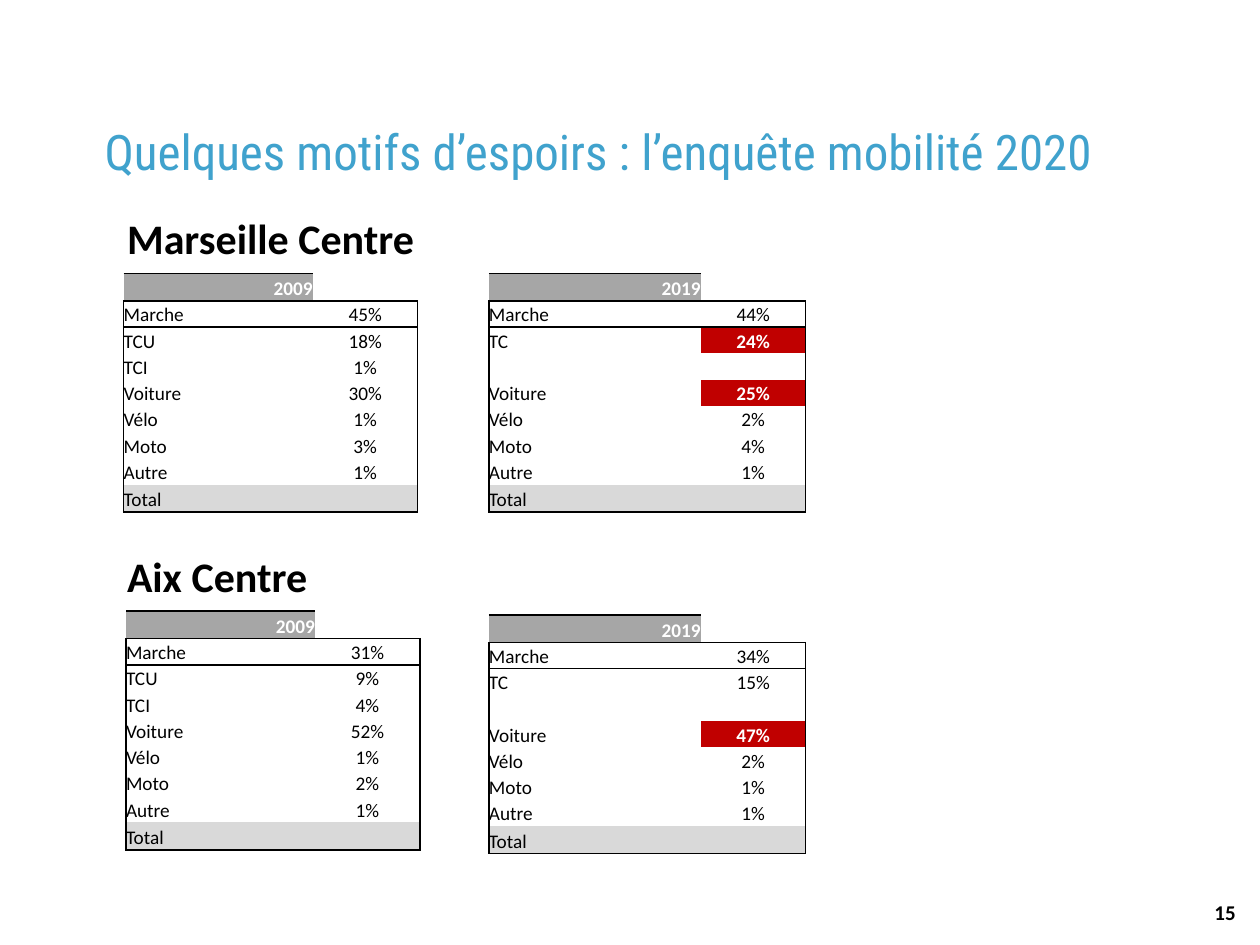
from lxml import etree
from pptx import Presentation
from pptx.dml.color import RGBColor
from pptx.enum.text import MSO_ANCHOR, MSO_AUTO_SIZE, PP_ALIGN
from pptx.oxml.ns import qn
from pptx.util import Pt

LEFT, MID, RIGHT = PP_ALIGN.LEFT, PP_ALIGN.CENTER, PP_ALIGN.RIGHT
LOW = MSO_ANCHOR.BOTTOM
GROW = MSO_AUTO_SIZE.SHAPE_TO_FIT_TEXT
PLAIN = "{2D5ABB26-0587-4C30-8999-92F81FD0307C}"
BLACK, WHITE, RED = "000000", "FFFFFF", "C00000"
GREY, PALE, BLUE = "A6A6A6", "D9D9D9", "40A2CD"
OLD = ["Marche", "TCU", "TCI", "Voiture", "Vélo", "Moto", "Autre"]
NEW = ["Marche", "TC", "", "Voiture", "Vélo", "Moto", "Autre"]


def color(code):
    """Turn a hex string into a colour."""
    return RGBColor.from_string(code)


def style(para, size, code, bold=False, face="Calibri"):
    """Format all runs of a paragraph."""
    for run in para.runs:
        font = run.font
        font.name, font.size, font.bold = face, Pt(size), bold
        font.color.rgb = color(code)


def label(slide, box, text, size, code, bold=False, face="Calibri"):
    """Add a text box and return its frame."""
    frame = slide.shapes.add_textbox(*map(Pt, box)).text_frame
    frame.word_wrap = True
    frame.auto_size = GROW
    frame.text = text
    style(frame.paragraphs[0], size, code, bold, face)
    return frame


def title(slide, box, text):
    """Add the slide title."""
    frame = label(slide, box, text, 28, BLUE, face="Roboto Condensed")
    frame.margin_left = 0


def heading(slide, box, text):
    """Add the heading of a city."""
    para = label(slide, box, text, 24, BLACK, True).paragraphs[0]
    para.line_spacing = Pt(30)
    para.space_after = Pt(8)


def border(cell, sides):
    """Draw a black line on each listed side of a cell."""
    props = cell._tc.get_or_add_tcPr()
    for spot, side in enumerate(s for s in "LRTB" if s in sides):
        line = etree.Element(qn(f"a:ln{side}"), w=str(Pt(1)))
        fill = etree.SubElement(line, qn("a:solidFill"))
        etree.SubElement(fill, qn("a:srgbClr"), val=BLACK)
        props.insert(spot, line)


def put(cell, text, align, ink=BLACK, fill=None, sides=""):
    """Fill in and format one table cell."""
    cell.margin_left = cell.margin_right = 0
    cell.margin_top = cell.margin_bottom = 0
    cell.vertical_anchor = LOW
    para = cell.text_frame.paragraphs[0]
    para.text = text
    para.alignment = align
    style(para, 11, ink, ink == WHITE)
    if not text:
        etree.SubElement(para._p, qn("a:endParaRPr"), sz="1100")
    if fill:
        cell.fill.solid()
        cell.fill.fore_color.rgb = color(fill)
    else:
        cell.fill.background()
    border(cell, sides)


def survey(slide, left, top, width, year, modes, shares, marked=()):
    """Add the table of travel shares for one year."""
    count = len(modes) + 2
    frame = slide.shapes.add_table(
        count, 2, Pt(left), Pt(top), Pt(width + 60), Pt(15 * count + 1.5))
    table = frame.table
    table.first_row = table.horz_banding = False
    table._tbl.tblPr.find(qn("a:tableStyleId")).text = PLAIN
    for col, size in zip(table.columns, (width, 60)):
        col.width = Pt(size)
    for num, row in enumerate(table.rows):
        row.height = Pt(15.75 if num in (0, count - 1) else 15)

    put(table.cell(0, 0), year, RIGHT, WHITE, GREY, "TB")
    put(table.cell(0, 1), "", MID, sides="B")
    for num, (mode, share) in enumerate(zip(modes, shares), 1):
        edge = "T" if num == 1 else ""
        ink, fill = (WHITE, RED) if mode in marked else (BLACK, None)
        text = "" if share is None else f"{share}%"
        put(table.cell(num, 0), mode, LEFT, sides="L" + edge)
        put(table.cell(num, 1), text, MID, ink, fill, "R" + edge)
    put(table.cell(count - 1, 0), "Total", LEFT, fill=PALE, sides="LB")
    put(table.cell(count - 1, 1), "", MID, fill=PALE, sides="RB")


def main():
    """Build and save the slide."""
    deck = Presentation()
    deck.slide_width, deck.slide_height = Pt(720), Pt(540)
    slide = deck.slides.add_slide(deck.slide_layouts[6])
    title(slide, (59.8, 66.2, 601, 41),
          "Quelques motifs d’espoirs : l’enquête mobilité 2020")
    heading(slide, (65.5, 116.6, 396.7, 37.4), "Marseille Centre")
    survey(slide, 70.7, 156.2, 108, "2009", OLD, [45, 18, 1, 30, 1, 3, 1])
    survey(slide, 279.4, 156.2, 121, "2019", NEW,
           [44, 24, None, 25, 2, 4, 1], ("TC", "Voiture"))
    heading(slide, (65.5, 309.6, 396.7, 37.4), "Aix Centre")
    survey(slide, 72, 349.2, 108, "2009", OLD, [31, 9, 4, 52, 1, 2, 1])
    survey(slide, 279.4, 351.4, 121, "2019", NEW,
           [34, 15, None, 47, 2, 1, 1], ("Voiture",))
    label(slide, (686.9, 510.5, 33.1, 28.8), "15", 12, BLACK, True)
    deck.save("out.pptx")


if __name__ == "__main__":
    main()
